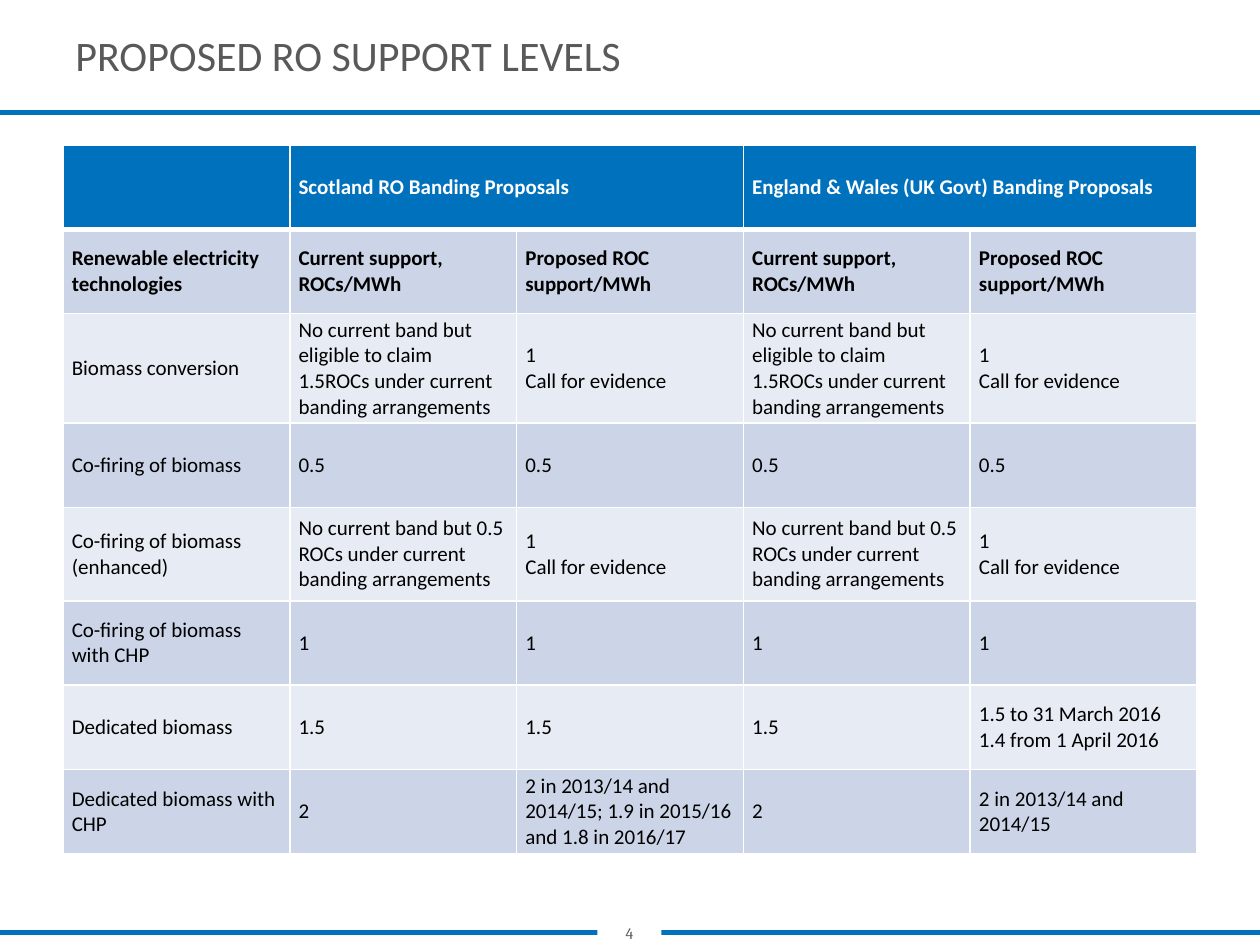
from lxml import etree
from pptx import Presentation
from pptx.dml.color import RGBColor
from pptx.enum import shapes, text
from pptx.oxml import ns
from pptx.util import Inches, Pt

BLUE, WHITE, GREY, BLACK = "0071BC", "FFFFFF", "595959", "000000"
BANDS = ["E7EBF3", "CCD5E7"]


def color(value):
    return RGBColor.from_string(value)


def write(frame, words, size=12, font="Calibri", fill=BLACK, bold=False, align=text.PP_ALIGN.LEFT):
    frame.word_wrap = True
    paragraph = frame.paragraphs[0]
    paragraph.text = words
    paragraph.alignment = align
    for run in paragraph.runs:
        run.font.size = Pt(size)
        run.font.name = font
        run.font.bold = bold
        run.font.color.rgb = color(fill)


deck = Presentation()
deck.slide_width, deck.slide_height = Inches(10), Inches(7.5)
slide = deck.slides.add_slide(deck.slide_layouts[6])

blocks = []
for left, top, width, height, fill in [
    (0, 7.39, 10, 0.02, BLUE),
    (0, 0.88, 10, 0.02, BLUE),
    (4.74, 7.31, 0.51, 0.19, WHITE),
]:
    block = slide.shapes.add_shape(
        shapes.MSO_SHAPE.RECTANGLE, Inches(left), Inches(top), Inches(width), Inches(height)
    )
    block.shadow.inherit = False
    block.fill.solid()
    block.fill.fore_color.rgb = color(fill)
    if fill == BLUE:
        block.line.color.rgb = color(BLUE)
        block.line.width = Pt(1.5)
    else:
        block.line.fill.background()
    blocks.append(block)

page_number = blocks[-1].text_frame
page_number.margin_left = page_number.margin_right = Inches(0.02)
page_number.margin_top = page_number.margin_bottom = Inches(0.02)
page_number.vertical_anchor = text.MSO_ANCHOR.MIDDLE
write(page_number, "4", size=9, font="Cambria", fill=GREY, align=text.PP_ALIGN.CENTER)

title = slide.shapes.add_textbox(Inches(0.5), Inches(0.04), Inches(7.32), Inches(0.79)).text_frame
title.vertical_anchor = text.MSO_ANCHOR.MIDDLE
write(title, "PROPOSED RO SUPPORT LEVELS", size=24, fill=GREY)

support = ["Current support, ROCs/MWh", "Proposed ROC support/MWh"]
conversion = [
    "No current band but eligible to claim 1.5ROCs under current banding arrangements",
    "1\nCall for evidence",
]
enhanced = [
    "No current band but 0.5 ROCs under current banding arrangements",
    "1\nCall for evidence",
]
levels = [
    ["", "Scotland RO Banding Proposals", "", "England & Wales (UK Govt) Banding Proposals", ""],
    ["Renewable electricity technologies"] + support * 2,
    ["Biomass conversion"] + conversion * 2,
    ["Co-firing of biomass"] + ["0.5"] * 4,
    ["Co-firing of biomass (enhanced)"] + enhanced * 2,
    ["Co-firing of biomass with CHP"] + ["1"] * 4,
    ["Dedicated biomass"] + ["1.5"] * 3 + ["1.5 to 31 March 2016\n1.4 from 1 April 2016"],
    ["Dedicated biomass with CHP", "2",
     "2 in 2013/14 and 2014/15; 1.9 in 2015/16 and 1.8 in 2016/17", "2",
     "2 in 2013/14 and 2014/15"],
]
row_heights = [0.67, 0.67, 0.87, 0.67, 0.74, 0.67, 0.67, 0.67]

table = slide.shapes.add_table(
    len(levels), 5, Inches(0.5), Inches(1.15), Inches(9), Inches(sum(row_heights))
).table
for column in table.columns:
    column.width = Inches(1.8)
for first in (1, 3):
    table.cell(0, first).merge(table.cell(0, first + 1))

for r, (entries, height) in enumerate(zip(levels, row_heights)):
    table.rows[r].height = Inches(height)
    for c, entry in enumerate(entries):
        cell = table.cell(r, c)
        cell.margin_left = cell.margin_right = Inches(0.07)
        cell.margin_top = cell.margin_bottom = 0
        cell.vertical_anchor = text.MSO_ANCHOR.MIDDLE
        properties = cell._tc.get_or_add_tcPr()
        for side in "LRTB":
            under_header = (r, side) in [(0, "B"), (1, "T")]
            border = etree.SubElement(properties, ns.qn(f"a:ln{side}"), w=str(Pt(3 if under_header else 1)))
            paint = etree.SubElement(border, ns.qn("a:solidFill"))
            etree.SubElement(paint, ns.qn("a:srgbClr"), val=WHITE)
        cell.fill.solid()
        cell.fill.fore_color.rgb = color(BANDS[r % 2] if r else BLUE)
        if entry:
            write(cell.text_frame, entry, fill=BLACK if r else WHITE, bold=r < 2,
                  align=text.PP_ALIGN.LEFT if r else text.PP_ALIGN.JUSTIFY)

deck.save("out.pptx")
